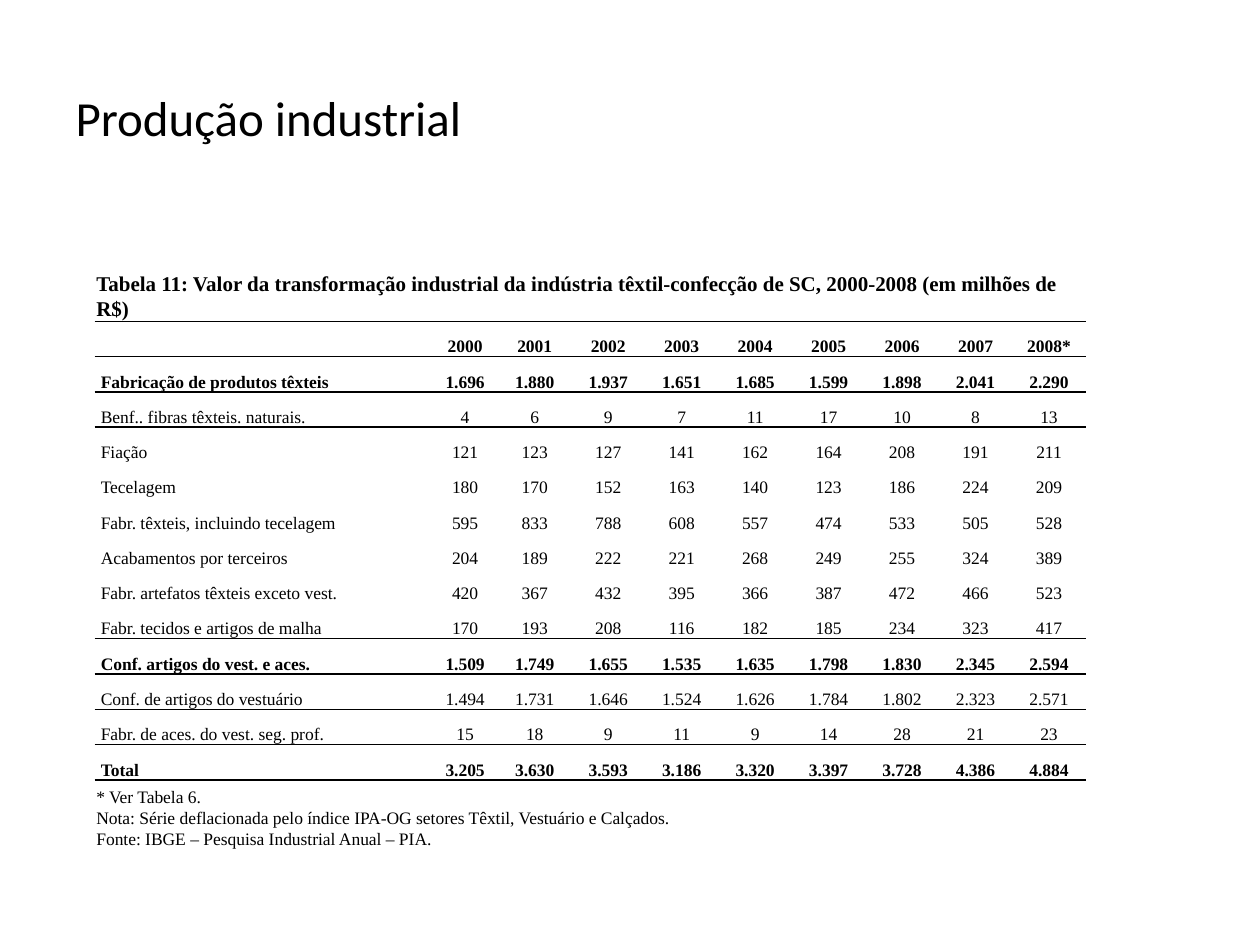
from lxml.etree import SubElement
from pptx import Presentation
from pptx.dml.color import RGBColor
from pptx.enum.text import MSO_ANCHOR, MSO_AUTO_SIZE, PP_ALIGN
from pptx.oxml.ns import qn
from pptx.util import Pt

BLACK = RGBColor(0, 0, 0)
SERIF = "Times New Roman"
NO_STYLE = "{2D5ABB26-0587-4C30-8999-92F81FD0307C}"

TITLE = "Produção industrial"
CAPTION = [
    "Tabela 11: Valor da transformação industrial da indústria têxtil-confecção "
    "de SC, 2000-2008 (em milhões de R$)",
]
NOTES = [
    "* Ver Tabela 6.",
    "Nota: Série deflacionada pelo índice IPA-OG setores Têxtil, Vestuário e Calçados.",
    "Fonte: IBGE – Pesquisa Industrial Anual – PIA.",
]
ROWS = [
    ("", "2000 2001 2002 2003 2004 2005 2006 2007 2008*"),
    ("Fabricação de produtos têxteis", "1.696 1.880 1.937 1.651 1.685 1.599 1.898 2.041 2.290"),
    ("Benf.. fibras têxteis. naturais.", "4 6 9 7 11 17 10 8 13"),
    ("Fiação", "121 123 127 141 162 164 208 191 211"),
    ("Tecelagem", "180 170 152 163 140 123 186 224 209"),
    ("Fabr. têxteis, incluindo tecelagem", "595 833 788 608 557 474 533 505 528"),
    ("Acabamentos por terceiros", "204 189 222 221 268 249 255 324 389"),
    ("Fabr. artefatos têxteis exceto vest.", "420 367 432 395 366 387 472 466 523"),
    ("Fabr. tecidos e artigos de malha", "170 193 208 116 182 185 234 323 417"),
    ("Conf. artigos do vest. e aces.", "1.509 1.749 1.655 1.535 1.635 1.798 1.830 2.345 2.594"),
    ("Conf. de artigos do vestuário", "1.494 1.731 1.646 1.524 1.626 1.784 1.802 2.323 2.571"),
    ("Fabr. de aces. do vest. seg. prof.", "15 18 9 11 9 14 28 21 23"),
    ("Total", "3.205 3.630 3.593 3.186 3.320 3.397 3.728 4.386 4.884"),
]
BOLD_ROWS = {0, 1, 9, 12}
COLUMN_WIDTHS = [193, 37.6] + [42] * 8
ROW_HEIGHT = 20.16


def add_span(para, text, size, font=SERIF, bold=False):
    span = para.add_run()
    span.text = text
    span.font.name = font
    span.font.size = Pt(size)
    span.font.bold = bold
    span.font.color.rgb = BLACK


def add_text(page, lines, left, top, width, height, size, bold=False):
    box = page.shapes.add_textbox(Pt(left), Pt(top), Pt(width), Pt(height))
    frame = box.text_frame
    frame.word_wrap = True
    frame.auto_size = MSO_AUTO_SIZE.SHAPE_TO_FIT_TEXT
    for index, line in enumerate(lines):
        para = frame.add_paragraph() if index else frame.paragraphs[0]
        add_span(para, line, size, bold=bold)


def add_border(cell, edge):
    properties = cell._tc.get_or_add_tcPr()
    line = SubElement(properties, qn(f"a:{edge}"), w=str(Pt(1)))
    fill = SubElement(line, qn("a:solidFill"))
    SubElement(fill, qn("a:srgbClr"), val=str(BLACK))


def fill_cell(cell, text, row, column):
    cell.margin_left = cell.margin_right = Pt(3.6)
    cell.margin_top = cell.margin_bottom = Pt(0)
    cell.vertical_anchor = MSO_ANCHOR.BOTTOM
    if BOLD_ROWS & {row, row - 1}:
        add_border(cell, "lnT")
    if BOLD_ROWS & {row, row + 1}:
        add_border(cell, "lnB")
    cell.fill.background()
    para = cell.text_frame.paragraphs[0]
    para.alignment = PP_ALIGN.CENTER if column else PP_ALIGN.LEFT
    if text:
        add_span(para, text, 10, bold=row in BOLD_ROWS)
    else:
        SubElement(para._p, qn("a:endParaRPr"), sz="1000")


def add_production_table(page):
    shape = page.shapes.add_table(
        len(ROWS), len(COLUMN_WIDTHS), Pt(54), Pt(183.6),
        Pt(sum(COLUMN_WIDTHS)), Pt(ROW_HEIGHT * len(ROWS)),
    )
    table = shape.table
    table.first_row = table.horz_banding = False
    for style in shape.element.iter(qn("a:tableStyleId")):
        style.text = NO_STYLE
    for column, width in zip(table.columns, COLUMN_WIDTHS):
        column.width = Pt(width)
    for row, (label, values) in enumerate(ROWS):
        table.rows[row].height = Pt(ROW_HEIGHT)
        for column, text in enumerate([label, *values.split()]):
            fill_cell(table.cell(row, column), text, row, column)


def main():
    deck = Presentation()
    deck.slide_width, deck.slide_height = Pt(720), Pt(540)
    page = deck.slides.add_slide(deck.slide_layouts[5])

    title = page.shapes.title
    title.left, title.top, title.width, title.height = Pt(36), Pt(21.6), Pt(648), Pt(90)
    title.text_frame.vertical_anchor = MSO_ANCHOR.MIDDLE
    para = title.text_frame.paragraphs[0]
    para.alignment = PP_ALIGN.LEFT
    add_span(para, TITLE, 28, "Calibri")

    add_text(page, CAPTION, 48, 151.2, 584, 36, 12, bold=True)
    add_text(page, NOTES, 48, 445.7, 590, 44, 10)
    add_production_table(page)
    deck.save("out.pptx")


if __name__ == "__main__":
    main()
